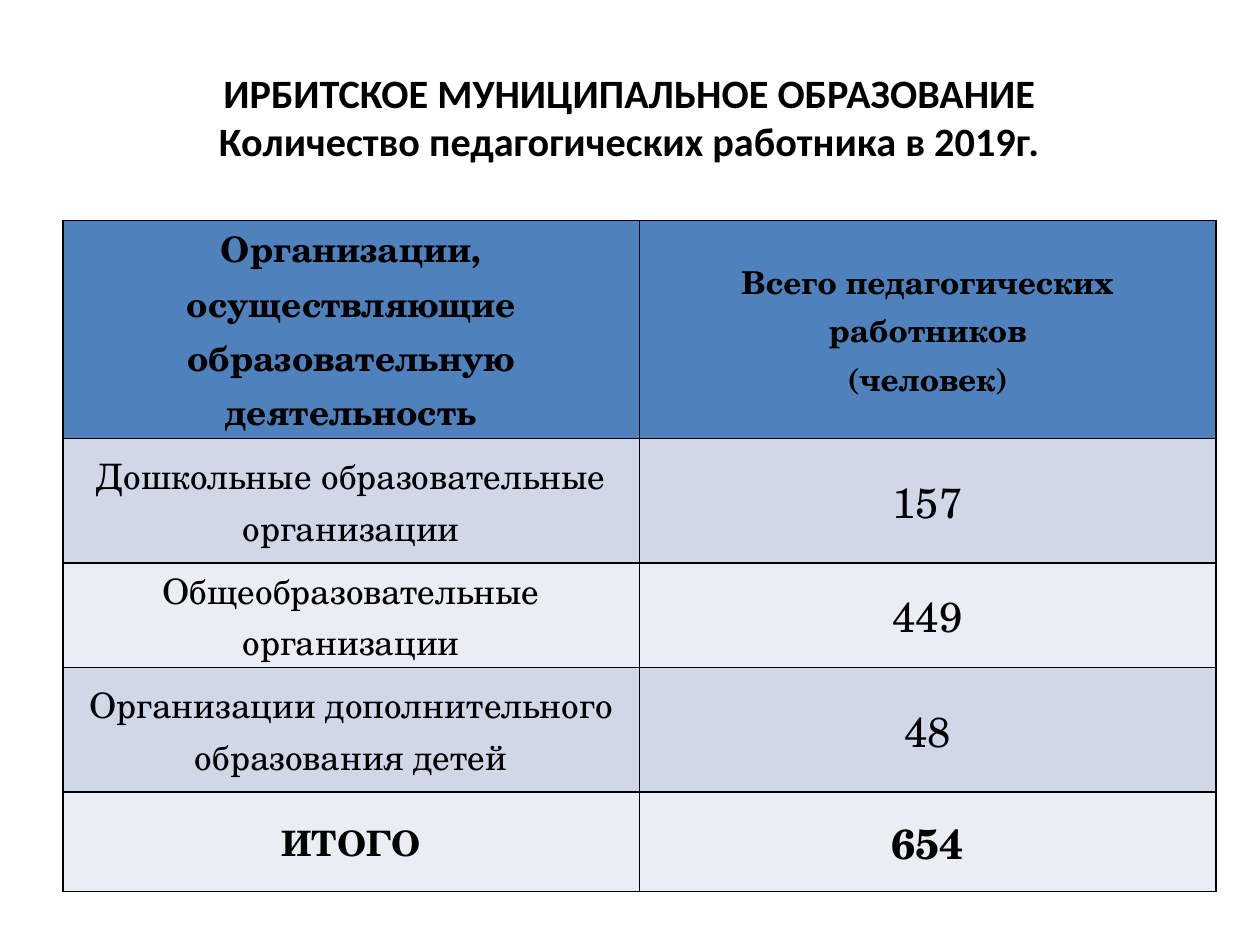
from lxml.etree import SubElement
from pptx import Presentation
from pptx.dml.color import RGBColor
from pptx.enum.text import MSO_ANCHOR, PP_ALIGN
from pptx.oxml.ns import qn
from pptx.util import Inches, Pt

COLORS = {
    "text": "000000",
    "border": "000000",
    "header": "4F81BD",
    "band_dark": "D0D8E8",
    "band_light": "E9EDF4",
}
TITLE_FONT = "Calibri"
TABLE_FONT = "TeX Gyre Schola"

TITLE = "ИРБИТСКОЕ МУНИЦИПАЛЬНОЕ ОБРАЗОВАНИЕ\vКоличество педагогических работника в 2019г."
HEADER = (
    "Организации, осуществляющие образовательную деятельность",
    "Всего педагогических работников\n(человек)",
)
STAFF = [
    ("Дошкольные образовательные организации", "157"),
    ("Общеобразовательные организации", "449"),
    ("Организации дополнительного образования детей", "48"),
    ("ИТОГО", "654"),
]
ROW_HEIGHTS = (1.58, 0.99, 0.79, 0.99, 0.79)


def write_text(frame, text, font=TABLE_FONT, size=20, bold=False, color="text"):
    """Fill a text frame with centred paragraphs in one format."""
    frame.text = text
    frame.word_wrap = True
    for paragraph in frame.paragraphs:
        paragraph.alignment = PP_ALIGN.CENTER
        for run in paragraph.runs:
            run.font.name = font
            run.font.size = Pt(size)
            run.font.bold = bold
            run.font.color.rgb = RGBColor.from_string(COLORS[color])


def add_borders(cell):
    """Draw thin lines on all four sides; they must precede the cell fill."""
    properties = cell._tc.get_or_add_tcPr()
    for side in ("a:lnL", "a:lnR", "a:lnT", "a:lnB"):
        line = SubElement(properties, qn(side), w=str(Pt(1)))
        fill = SubElement(line, qn("a:solidFill"))
        SubElement(fill, qn("a:srgbClr"), val=COLORS["border"])


def format_cell(cell, text, fill, size, bold):
    cell.margin_left = cell.margin_right = cell.margin_top = Inches(0.01)
    cell.margin_bottom = 0
    cell.vertical_anchor = MSO_ANCHOR.MIDDLE
    add_borders(cell)
    cell.fill.solid()
    cell.fill.fore_color.rgb = RGBColor.from_string(COLORS[fill])
    write_text(cell.text_frame, text, size=size, bold=bold)


def place_title(slide, left, top, width, height):
    title = slide.shapes.title
    title.left, title.top, title.width, title.height = left, top, width, height
    write_text(title.text_frame, TITLE, font=TITLE_FONT, size=23, bold=True)
    title.text_frame.vertical_anchor = MSO_ANCHOR.MIDDLE


def place_staff_table(slide, left, top, width, height):
    rows = [HEADER, *STAFF]
    table = slide.shapes.add_table(len(rows), 2, left, top, width, height).table
    for column in table.columns:
        column.width = width // 2
    for index, (row, row_height) in enumerate(zip(rows, ROW_HEIGHTS)):
        table.rows[index].height = Inches(row_height)
        is_header = index == 0
        is_total = index == len(rows) - 1
        fill = "header" if is_header else "band_dark" if index % 2 else "band_light"
        sizes = (20, 18) if is_header else (20, 24)
        for column, (text, size) in enumerate(zip(row, sizes)):
            format_cell(table.cell(index, column), text, fill, size, is_header or is_total)


def main():
    presentation = Presentation()
    presentation.slide_width = Inches(10)
    presentation.slide_height = Inches(7.5)
    slide = presentation.slides.add_slide(presentation.slide_layouts[5])

    # Heading
    place_title(slide, Inches(0.5), Inches(0.3), Inches(9), Inches(1.25))
    # Staff numbers by kind of organisation
    place_staff_table(slide, Inches(0.5), Inches(1.75), Inches(9.15), Inches(sum(ROW_HEIGHTS)))

    presentation.save("out.pptx")


if __name__ == "__main__":
    main()
